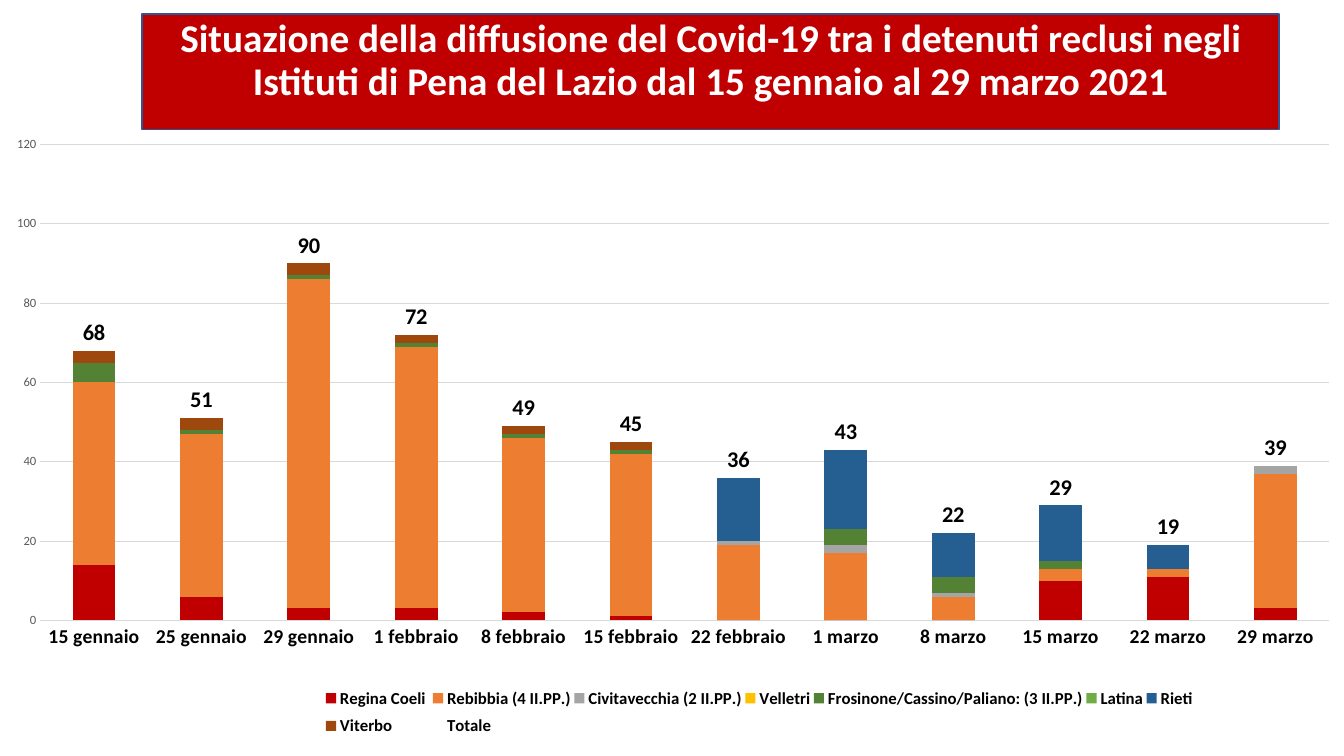
from pptx import Presentation
from pptx.chart.data import CategoryChartData
from pptx.dml.color import RGBColor
from pptx.enum.chart import (XL_CHART_TYPE as ChartType, XL_LABEL_POSITION as LabelPosition,
                             XL_LEGEND_POSITION as LegendPosition, XL_TICK_MARK as TickMark)
from pptx.enum.text import MSO_ANCHOR as Anchor, PP_ALIGN as Align
from pptx.oxml import parse_xml
from pptx.oxml.ns import nsdecls
from pptx.util import Pt

WHITE = RGBColor(0xFF, 0xFF, 0xFF)
BLACK = RGBColor(0, 0, 0)
RED = RGBColor(0xC0, 0, 0)
NAVY = RGBColor(0x32, 0x54, 0x91)
GRID_GREY = RGBColor(0xD9, 0xD9, 0xD9)
TEXT_GREY = RGBColor(0x59, 0x59, 0x59)
ORANGE = RGBColor(0xED, 0x7D, 0x31)
GREY = RGBColor(0xA5, 0xA5, 0xA5)
YELLOW = RGBColor(0xFF, 0xC0, 0)
DARK_GREEN = RGBColor(0x54, 0x82, 0x35)
GREEN = RGBColor(0x70, 0xAD, 0x47)
BLUE = RGBColor(0x25, 0x5E, 0x91)
BROWN = RGBColor(0x9E, 0x48, 0x0E)

TITLE = ("Situazione della diffusione del Covid-19 tra i detenuti reclusi negli "
         "Istituti di Pena del Lazio dal 15 gennaio al 29 marzo 2021")
DATES = ["15 gennaio", "25 gennaio", "29 gennaio", "1 febbraio", "8 febbraio", "15 febbraio",
         "22 febbraio", "1 marzo", "8 marzo", "15 marzo", "22 marzo", "29 marzo"]
PRISONS = [
    ("Regina Coeli ", RED, [14, 6, 3, 3, 2, 1, 0, 0, 0, 10, 11, 3]),
    ("Rebibbia (4 II.PP.)", ORANGE, [46, 41, 83, 66, 44, 41, 19, 17, 6, 3, 2, 34]),
    ("Civitavecchia (2 II.PP.)", GREY, [0, 0, 0, 0, 0, 0, 1, 2, 1, 0, 0, 2]),
    ("Velletri", YELLOW, [0] * 12),
    ("Frosinone/Cassino/Paliano: (3 II.PP.)", DARK_GREEN, [5, 1, 1, 1, 1, 1, 0, 4, 4, 2, 0, 0]),
    ("Latina", GREEN, [0] * 12),
    ("Rieti", BLUE, [0, 0, 0, 0, 0, 0, 16, 20, 11, 14, 6, 0]),
    ("Viterbo", BROWN, [3, 3, 3, 2, 2, 2, 0, 0, 0, 0, 0, 0]),
]
TOTALS = [sum(counts) for counts in zip(*(values for _, _, values in PRISONS))]


def manual_layout(x, y, width, height, inner=False):
    """Chart layout element; lengths are fractions of the chart."""
    target = '<c:layoutTarget val="inner"/>' if inner else ""
    sizes = zip("xywh", (x, y, width, height))
    return parse_xml(
        f'<c:layout {nsdecls("c")}><c:manualLayout>{target}'
        '<c:xMode val="edge"/><c:yMode val="edge"/>'
        + "".join(f'<c:{tag} val="{size}"/>' for tag, size in sizes)
        + "</c:manualLayout></c:layout>")


class SlideBuilder:
    font_name = "Calibri"

    def __init__(self, page):
        self.page = page

    def style(self, font, size, color=BLACK, bold=False):
        font.name = self.font_name
        font.size = Pt(size)
        font.bold = bold
        font.color.rgb = color

    def title(self, text, left, top, width, height):
        box = self.page.shapes.title
        box.left, box.top, box.width, box.height = Pt(left), Pt(top), Pt(width), Pt(height)
        box.fill.solid()
        box.fill.fore_color.rgb = RED
        box.line.color.rgb = NAVY
        box.line.width = Pt(1)
        frame = box.text_frame
        frame.text = text
        frame.word_wrap = True
        frame.vertical_anchor = Anchor.TOP
        para = frame.paragraphs[0]
        para.alignment = Align.CENTER
        para.line_spacing = 0.9
        para.space_before = Pt(10)
        self.style(para.runs[0].font, 28, WHITE, True)

    def stacked_chart(self, left, top, width, height):
        data = CategoryChartData()
        data.categories = DATES
        for name, _, values in PRISONS:
            data.add_series(name, values)
        data.add_series("Totale", TOTALS)
        chart = self.page.shapes.add_chart(ChartType.COLUMN_STACKED, Pt(left), Pt(top),
                                           Pt(width), Pt(height), data).chart
        chart.has_title = False
        self.style(chart.font, 10)
        plot = chart.plots[0]
        plot.gap_width, plot.overlap, plot.vary_by_categories = 150, 100, False
        *prisons, total = plot.series
        for series, (_, color, _) in zip(prisons, PRISONS):
            series.format.fill.solid()
            series.format.fill.fore_color.rgb = color
        self.total_labels(total)
        self.axes(chart)
        self.legend(chart)
        area = chart.element.xpath("c:chart/c:plotArea")[0]
        for layout in area.xpath("c:layout"):
            area.remove(layout)
        area.insert(0, manual_layout(0.03, 0.025, 0.959, 0.759, inner=True))

    def total_labels(self, series):
        """Hide the total columns and keep their values just above each stack."""
        series.format.fill.background()
        series.format.line.fill.background()
        labels = series.data_labels
        labels.show_value = True
        labels.position = LabelPosition.INSIDE_BASE
        self.style(labels.font, 16, bold=True)

    def axes(self, chart):
        dates, counts = chart.category_axis, chart.value_axis
        for axis in (dates, counts):
            axis.major_tick_mark = axis.minor_tick_mark = TickMark.NONE
        self.style(dates.tick_labels.font, 14, bold=True)
        self.style(counts.tick_labels.font, 9, TEXT_GREY)
        counts.minimum_scale, counts.maximum_scale, counts.major_unit = 0, 120, 20
        counts.has_major_gridlines = True
        counts.format.line.fill.background()
        for line in (dates.format.line, counts.major_gridlines.format.line):
            line.color.rgb = GRID_GREY
            line.width = Pt(0.75)

    def legend(self, chart):
        chart.has_legend = True
        legend = chart.legend
        legend.position = LegendPosition.BOTTOM
        legend.include_in_layout = False
        self.style(legend.font, 12, bold=True)
        position = chart.element.xpath("c:chart/c:legend/c:legendPos")[0]
        for layout in chart.element.xpath("c:chart/c:legend/c:layout"):
            layout.getparent().remove(layout)
        position.addnext(manual_layout(0.24, 0.88, 0.65, 0.1))


def main():
    deck = Presentation()
    deck.slide_width, deck.slide_height = Pt(960), Pt(540)
    builder = SlideBuilder(deck.slides.add_slide(deck.slide_layouts[5]))
    builder.title(TITLE, 101.5, 10, 812, 82.5)
    builder.stacked_chart(0, 92, 960, 448)
    deck.save("out.pptx")


if __name__ == "__main__":
    main()
